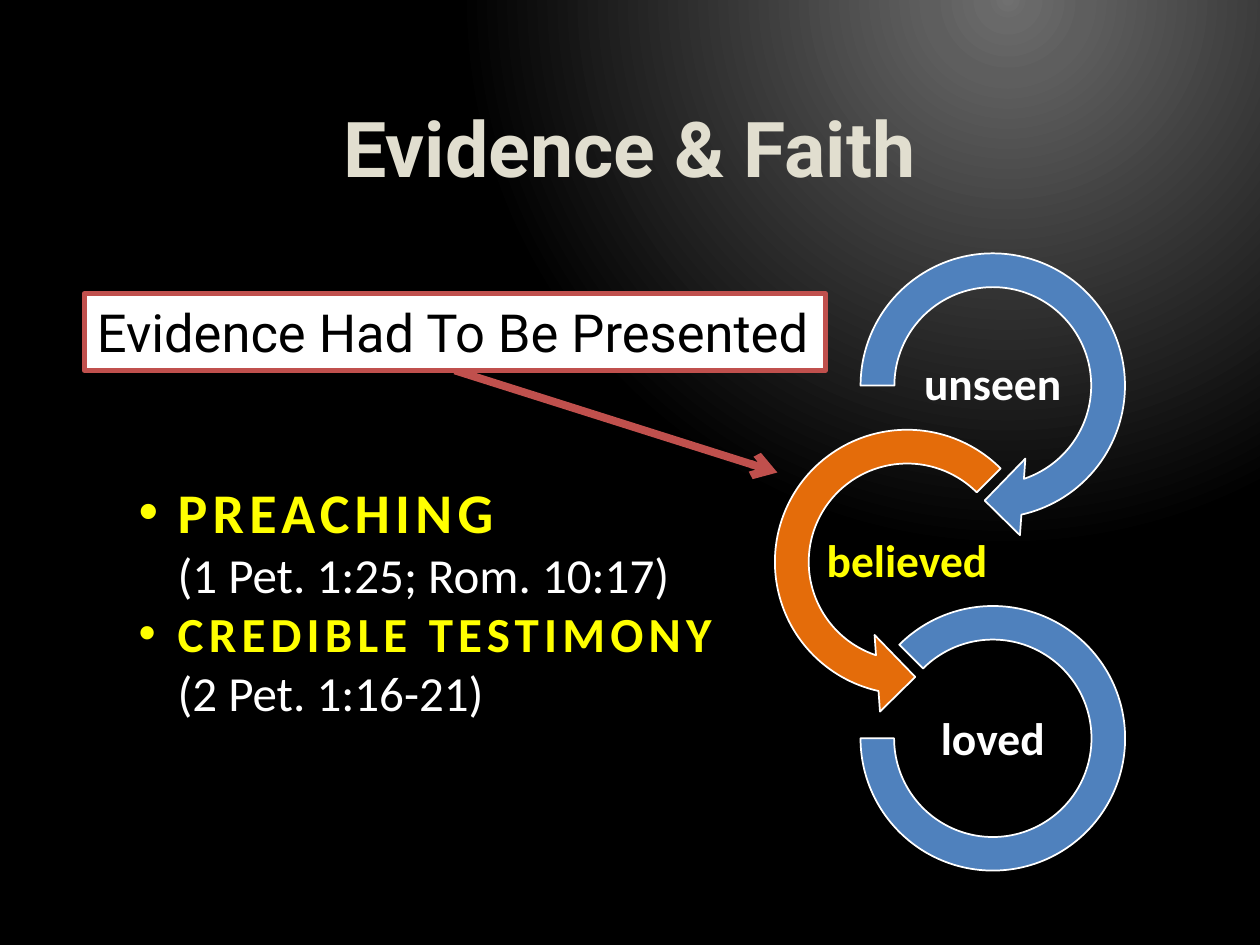
from copy import deepcopy
from dataclasses import dataclass

from lxml import etree
from pptx import Presentation
from pptx.dml.color import RGBColor
from pptx.enum.shapes import MSO_CONNECTOR, MSO_SHAPE
from pptx.enum.text import MSO_ANCHOR, MSO_AUTO_SIZE, PP_ALIGN
from pptx.oxml import parse_xml
from pptx.oxml.ns import nsdecls, qn
from pptx.util import Inches, Pt

STRAIGHT = MSO_CONNECTOR.STRAIGHT
RECTANGLE = MSO_SHAPE.RECTANGLE
CENTER, LEFT = PP_ALIGN.CENTER, PP_ALIGN.LEFT
TOP, MIDDLE, BOTTOM = MSO_ANCHOR.TOP, MSO_ANCHOR.MIDDLE, MSO_ANCHOR.BOTTOM
NO_AUTOFIT = MSO_AUTO_SIZE.NONE

WHITE, BLACK, YELLOW = "FFFFFF", "000000", "FFFF00"
RED, BLUE, ORANGE, CREAM = "C0504D", "4F81BD", "E46C0A", "E1DECF"
GLOW = [(0, "707070"), (3, "696969"), (10, "5E5E5E"), (70, BLACK), (100, BLACK)]


@dataclass
class Stage:
    word: str
    preset: MSO_SHAPE
    adjustments: tuple
    left: float
    top: float
    size: float
    fill: str
    label_left: float
    label_top: float
    label_color: str = WHITE


@dataclass
class Evidence:
    heading: str
    reference: str
    heading_size: int


STAGES = [
    Stage("unseen", MSO_SHAPE.CIRCULAR_ARROW, (0.11, 11.42, 45, 108, 0.125),
          6.66, 1.84, 2.44, BLUE, 7.2, 2.72),
    Stage("believed", MSO_SHAPE.LEFT_CIRCULAR_ARROW, (0.11, 11.42, 63, 189, 0.125),
          5.98, 3.24, 2.44, ORANGE, 6.52, 4.13, YELLOW),
    Stage("loved", MSO_SHAPE.BLOCK_ARC, (135, 108, 0.127),
          6.83, 4.81, 2.1, BLUE, 7.2, 5.54),
]
EVIDENCE = [
    Evidence("PREACHING", "(1 Pet. 1:25; Rom. 10:17)", 32),
    Evidence("CREDIBLE TESTIMONY", "(2 Pet. 1:16-21)", 28),
]


def rgb(color: str) -> RGBColor:
    return RGBColor.from_string(color)


def style_run(run, font: str, size: int, color: str, bold: bool = False) -> None:
    run.font.name = font
    run.font.size = Pt(size)
    run.font.bold = bold
    run.font.color.rgb = rgb(color)


def style_shape(shape, fill: str, line: str, width: float) -> None:
    shape.shadow.inherit = False
    shape.fill.solid()
    shape.fill.fore_color.rgb = rgb(fill)
    shape.line.color.rgb = rgb(line)
    shape.line.width = Pt(width)


def place(shape, left: float, top: float, width: float, height: float) -> None:
    shape.left, shape.top = Inches(left), Inches(top)
    shape.width, shape.height = Inches(width), Inches(height)


def paint_background(slide) -> None:
    stops = "".join(
        f'<a:gs pos="{position * 1000}"><a:srgbClr val="{color}"/></a:gs>'
        for position, color in GLOW
    )
    slide.background.fill.solid()
    properties = slide.background._cSld.bg.bgPr
    gradient = parse_xml(
        f'<a:gradFill {nsdecls("a")} rotWithShape="1"><a:gsLst>{stops}</a:gsLst>'
        '<a:path path="circle">'
        '<a:fillToRect l="60000" t="-3000" r="0" b="200000"/>'
        "</a:path></a:gradFill>"
    )
    properties.replace(properties.find(qn("a:solidFill")), gradient)


def draw_title(slide) -> None:
    title = slide.shapes.title
    place(title, 0.5, 0.33, 9, 1.25)
    title.text_frame.text = "Evidence & Faith"
    title.text_frame.vertical_anchor = BOTTOM
    paragraph = title.text_frame.paragraphs[0]
    paragraph.alignment = CENTER
    style_run(paragraph.runs[0], "Roboto", 44, CREAM, True)


def draw_claim(slide) -> None:
    pointer = slide.shapes.add_connector(
        STRAIGHT, Inches(3.61), Inches(2.94), Inches(6.17), Inches(3.75)
    )
    pointer.line.color.rgb = rgb(RED)
    pointer.line.width = Pt(4.5)
    etree.SubElement(pointer.line._get_or_add_ln(), qn("a:tailEnd"), type="arrow")
    etree.SubElement(pointer._element.spPr, qn("a:effectLst"))

    claim = slide.shapes.add_shape(
        RECTANGLE, Inches(0.67), Inches(2.33), Inches(5.88), Inches(0.61)
    )
    style_shape(claim, WHITE, RED, 3)
    claim.text_frame.text = "Evidence Had To Be Presented"
    claim.text_frame.word_wrap = False
    claim.text_frame.vertical_anchor = TOP
    paragraph = claim.text_frame.paragraphs[0]
    paragraph.alignment = LEFT
    style_run(paragraph.runs[0], "Roboto", 30, BLACK)
    pointer.begin_connect(claim, 2)


def draw_stage(slide, stage: Stage) -> None:
    ring = slide.shapes.add_shape(
        stage.preset, Inches(stage.left), Inches(stage.top),
        Inches(stage.size), Inches(stage.size)
    )
    style_shape(ring, stage.fill, WHITE, 1)
    for index, value in enumerate(stage.adjustments):
        ring.adjustments[index] = value

    label = slide.shapes.add_textbox(
        Inches(stage.label_left), Inches(stage.label_top), Inches(1.36), Inches(0.68)
    )
    frame = label.text_frame
    frame.text = stage.word
    frame.word_wrap = True
    frame.vertical_anchor = MIDDLE
    frame.margin_left = frame.margin_right = Inches(0.02)
    frame.margin_top = frame.margin_bottom = Inches(0.02)
    paragraph = frame.paragraphs[0]
    paragraph.alignment = CENTER
    paragraph.line_spacing = 0.9
    style_run(paragraph.runs[0], "Calibri", 26, stage.label_color, True)


def write_evidence(paragraph, evidence: Evidence) -> None:
    paragraph.text = f"{evidence.heading}\v{evidence.reference}"
    paragraph.space_before = Pt(0)
    properties = paragraph._p.get_or_add_pPr()
    properties.set("marL", str(Inches(0.31)))
    properties.set("indent", str(-Inches(0.31)))
    etree.SubElement(properties, qn("a:buFont"), typeface="Arial")
    etree.SubElement(properties, qn("a:buChar"), char="•")
    heading, reference = paragraph.runs
    style_run(heading, "Calibri", evidence.heading_size, YELLOW, True)
    style_run(reference, "Calibri", 28, WHITE)
    heading_properties = heading._r.get_or_add_rPr()
    heading_properties.set("spc", "300")
    paragraph._p.find(qn("a:br")).append(deepcopy(heading_properties))


def draw_evidence(slide) -> None:
    body = slide.placeholders[1]
    place(body, 1, 3.74, 5.16, 2.05)
    frame = body.text_frame
    frame.word_wrap = False
    frame.auto_size = NO_AUTOFIT
    frame.vertical_anchor = TOP
    for index, evidence in enumerate(EVIDENCE):
        paragraph = frame.add_paragraph() if index else frame.paragraphs[0]
        write_evidence(paragraph, evidence)


def main() -> None:
    presentation = Presentation()
    presentation.slide_width, presentation.slide_height = Inches(10), Inches(7.5)
    slide = presentation.slides.add_slide(presentation.slide_layouts[1])
    paint_background(slide)
    draw_title(slide)
    draw_claim(slide)
    for stage in STAGES:
        draw_stage(slide, stage)
    draw_evidence(slide)
    presentation.save("out.pptx")


if __name__ == "__main__":
    main()
